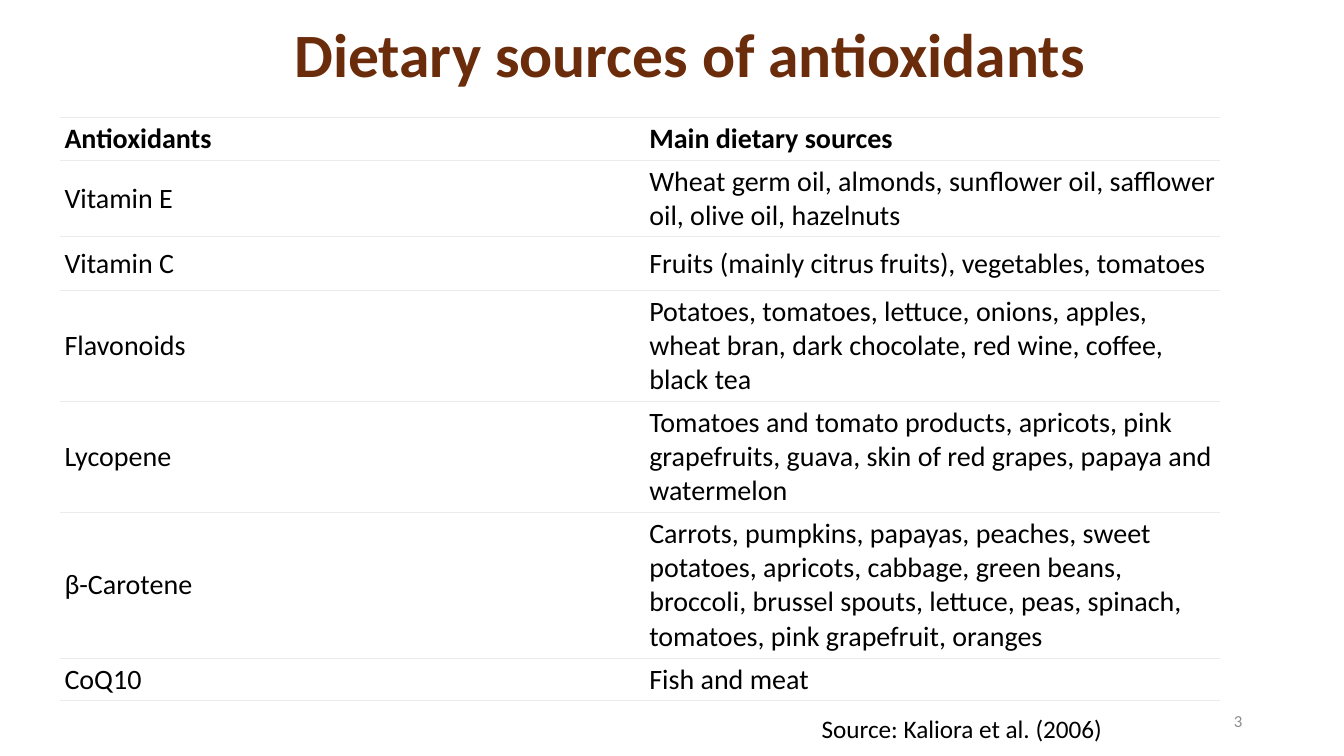
from typing import NamedTuple

from lxml.etree import SubElement
from pptx import Presentation
from pptx.dml.color import RGBColor
from pptx.enum.text import MSO_ANCHOR as Anchor, MSO_AUTO_SIZE as AutoSize, PP_ALIGN as Align
from pptx.oxml.ns import qn
from pptx.util import Emu, Pt

EMU_PER_PX = 9144  # 100 px to the inch
FONT = "Calibri"
BLACK, BROWN, GREY, RULE = "000000", "6A2C0B", "8C8C8C", "EBEBEB"


class Box(NamedTuple):
    left: int
    top: int
    width: int
    height: int


class Style(NamedTuple):
    size: int
    color: str = BLACK
    bold: bool = False
    align: Align = Align.LEFT


class Source(NamedTuple):
    antioxidant: str
    foods: str
    height: int


class Note(NamedTuple):
    text: str
    box: Box
    style: Style
    anchor: Anchor


TITLE_BOX = Box(48, 10, 1273, 94)
TITLE_STYLE = Style(44, BROWN, True, Align.CENTER)
TABLE_LEFT, TABLE_TOP = 60, 117
COLUMN_WIDTHS = (580, 570)
CELL_MARGIN = 4
SOURCES = [
    Source("Antioxidants", "Main dietary sources", 42),
    Source("Vitamin E",
           "Wheat germ oil, almonds, sunflower oil, safflower oil, olive oil, hazelnuts", 76),
    Source("Vitamin C", "Fruits (mainly citrus fruits), vegetables, tomatoes", 53),
    Source("Flavonoids",
           "Potatoes, tomatoes, lettuce, onions, apples, wheat bran, dark chocolate, "
           "red wine, coffee, black tea", 109),
    Source("Lycopene",
           "Tomatoes and tomato products, apricots, pink grapefruits, guava, "
           "skin of red grapes, papaya and watermelon", 108),
    Source("β-Carotene",
           "Carrots, pumpkins, papayas, peaches, sweet potatoes, apricots, cabbage, "
           "green beans, broccoli, brussel spouts, lettuce, peas, spinach, tomatoes, "
           "pink grapefruit, oranges", 145),
    Source("CoQ10", "Fish and meat", 42),
]
NOTES = [
    Note("Source: Kaliora et al. (2006)", Box(805, 703, 307, 40), Style(18), Anchor.TOP),
    Note("3", Box(942, 695, 300, 40), Style(12, GREY, align=Align.RIGHT), Anchor.MIDDLE),
]


def px(n: int) -> Emu:
    return Emu(n * EMU_PER_PX)


def rgb(color: str) -> RGBColor:
    return RGBColor.from_string(color)


def write(tf, text: str, style: Style) -> None:
    tf.text = text
    tf.word_wrap = True
    p = tf.paragraphs[0]
    p.alignment = style.align
    font = p.runs[0].font
    font.name, font.size, font.bold = FONT, Pt(style.size), style.bold
    font.color.rgb = rgb(style.color)


def rule_cell(cell) -> None:
    """Draw thin rules above and below the cell, and none at its sides."""
    tc_pr = cell._tc.get_or_add_tcPr()
    for i, side in enumerate(("lnL", "lnR", "lnT", "lnB")):
        ln = SubElement(tc_pr, qn(f"a:{side}"), w=str(Pt(0.75)))
        tc_pr.insert(i, ln)
        if side in ("lnT", "lnB"):
            fill = SubElement(ln, qn("a:solidFill"))
            SubElement(fill, qn("a:srgbClr"), val=RULE)
        else:
            SubElement(ln, qn("a:noFill"))


def add_title(s) -> None:
    title = s.shapes.title
    title.left, title.top, title.width, title.height = map(px, TITLE_BOX)
    tf = title.text_frame
    write(tf, "Dietary sources of antioxidants", TITLE_STYLE)
    tf.auto_size = AutoSize.NONE
    tf.vertical_anchor = Anchor.MIDDLE
    tf.paragraphs[0].line_spacing = 0.9


def add_sources(s) -> None:
    box = Box(TABLE_LEFT, TABLE_TOP, sum(COLUMN_WIDTHS), sum(r.height for r in SOURCES))
    table = s.shapes.add_table(len(SOURCES), len(COLUMN_WIDTHS), *map(px, box)).table
    table.first_row = table.horz_banding = False
    for column, width in zip(table.columns, COLUMN_WIDTHS):
        column.width = px(width)
    for i, (row, source) in enumerate(zip(table.rows, SOURCES)):
        row.height = px(source.height)
        style = Style(20, bold=i == 0)
        for cell, text in zip(row.cells, (source.antioxidant, source.foods)):
            write(cell.text_frame, text, style)
            cell.vertical_anchor = Anchor.MIDDLE
            cell.margin_left = cell.margin_right = px(CELL_MARGIN)
            cell.margin_top = cell.margin_bottom = px(CELL_MARGIN)
            cell.fill.background()
            rule_cell(cell)


def add_note(s, note: Note) -> None:
    tf = s.shapes.add_textbox(*map(px, note.box)).text_frame
    write(tf, note.text, note.style)
    tf.vertical_anchor = note.anchor


def main() -> None:
    prs = Presentation()
    prs.slide_width, prs.slide_height = px(1333), px(750)
    s = prs.slides.add_slide(prs.slide_layouts[5])
    add_title(s)
    add_sources(s)
    for note in NOTES:
        add_note(s, note)
    prs.save("out.pptx")


if __name__ == "__main__":
    main()
